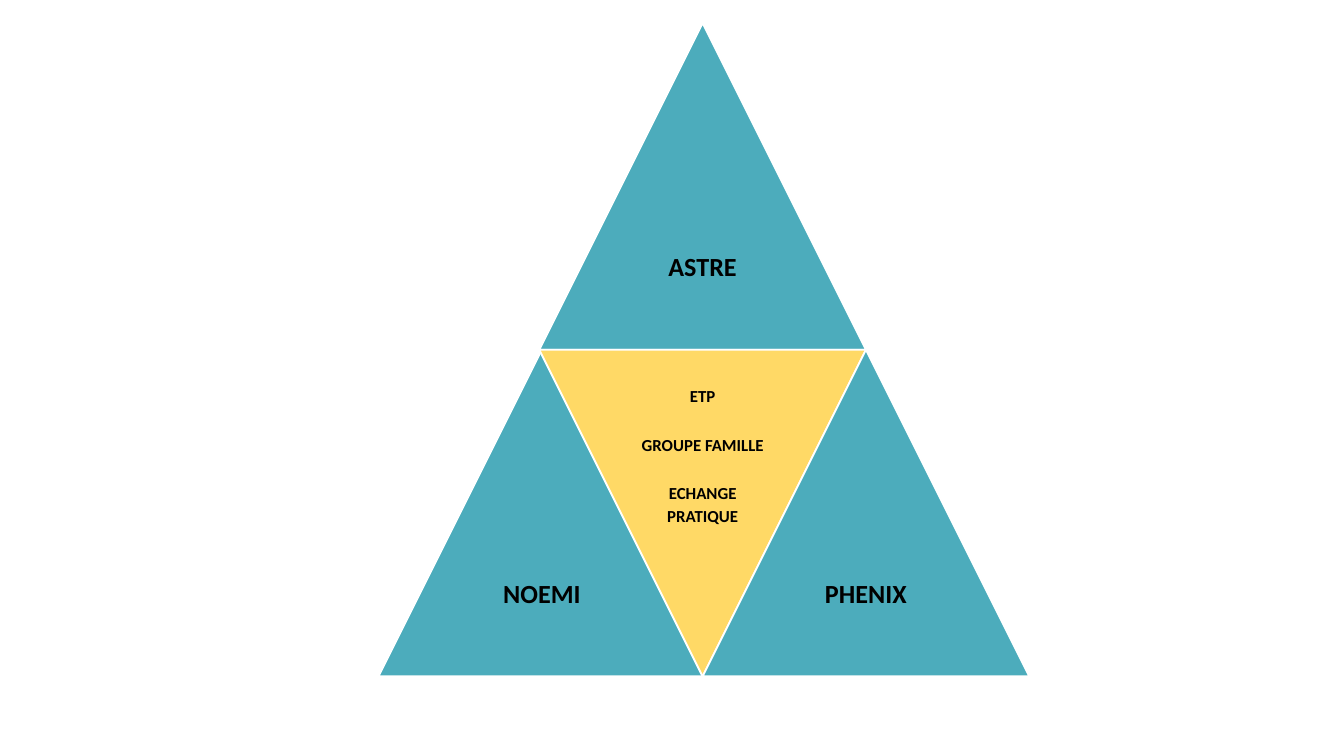
from pptx import Presentation
from pptx.dml.color import RGBColor
from pptx.enum.shapes import MSO_SHAPE as SHAPE
from pptx.enum.text import MSO_ANCHOR as ANCHOR, PP_ALIGN as ALIGN
from pptx.util import Pt

SIDE = 175
HALF = SIDE / 2
TOP, MIDDLE = 12.4, 187.4
CENTER = 288.9


def rgb(value):
    return RGBColor.from_string(value)


class Deck:
    font = "Calibri"
    text_color = "000000"
    line_color = "FFFFFF"
    teal = "4CACBC"
    yellow = "FFD966"

    def __init__(self, prs):
        self.s = prs.slides.add_slide(prs.slide_layouts[6])

    def triangle(self, x, y, color, rotation=0):
        sp = self.s.shapes.add_shape(
            SHAPE.ISOSCELES_TRIANGLE, Pt(x), Pt(y), Pt(SIDE), Pt(SIDE))
        sp.rotation = rotation
        sp.shadow.inherit = False
        sp.fill.solid()
        sp.fill.fore_color.rgb = rgb(color)
        sp.line.color.rgb = rgb(self.line_color)
        sp.line.width = Pt(1)

    def label(self, x, y, lines, size, inset, top_inset=None):
        """Add (text, space after) lines; a top inset anchors them at the top."""
        sp = self.s.shapes.add_textbox(Pt(x), Pt(y), Pt(HALF), Pt(HALF))
        tf = sp.text_frame
        tf.word_wrap = True
        tf.margin_left = tf.margin_right = tf.margin_bottom = Pt(inset)
        tf.margin_top = Pt(top_inset or inset)
        tf.vertical_anchor = ANCHOR.TOP if top_inset else ANCHOR.MIDDLE
        tf.text = "\n".join(text for text, _ in lines)
        for p, (_, after) in zip(tf.paragraphs, lines):
            p.alignment = ALIGN.CENTER
            p.line_spacing = 0.9
            p.space_after = Pt(after)
            for r in p.runs:
                r.font.name = self.font
                r.font.size = Pt(size)
                r.font.bold = True
                r.font.color.rgb = rgb(self.text_color)

    def unit(self, name, x, y):
        self.triangle(x, y, self.teal)
        self.label(x + HALF / 2, y + HALF, [(name, 4.9)], 14, 4.2)

    def core(self, lines, x, y):
        self.triangle(x, y, self.yellow, rotation=180)
        self.label(x + HALF / 2, y, lines, 9, 2.7, top_inset=20.7)


def main():
    prs = Presentation()
    prs.slide_width, prs.slide_height = Pt(720), Pt(405)
    deck = Deck(prs)
    deck.unit("ASTRE", CENTER, TOP)
    deck.unit("NOEMI", 202.8, MIDDLE)
    deck.core([("ETP", 16), ("GROUPE FAMILLE", 16), ("ECHANGE", 3), ("PRATIQUE", 3)],
              CENTER, MIDDLE)
    deck.unit("PHENIX", CENTER + HALF, MIDDLE)
    prs.save("out.pptx")


if __name__ == "__main__":
    main()
